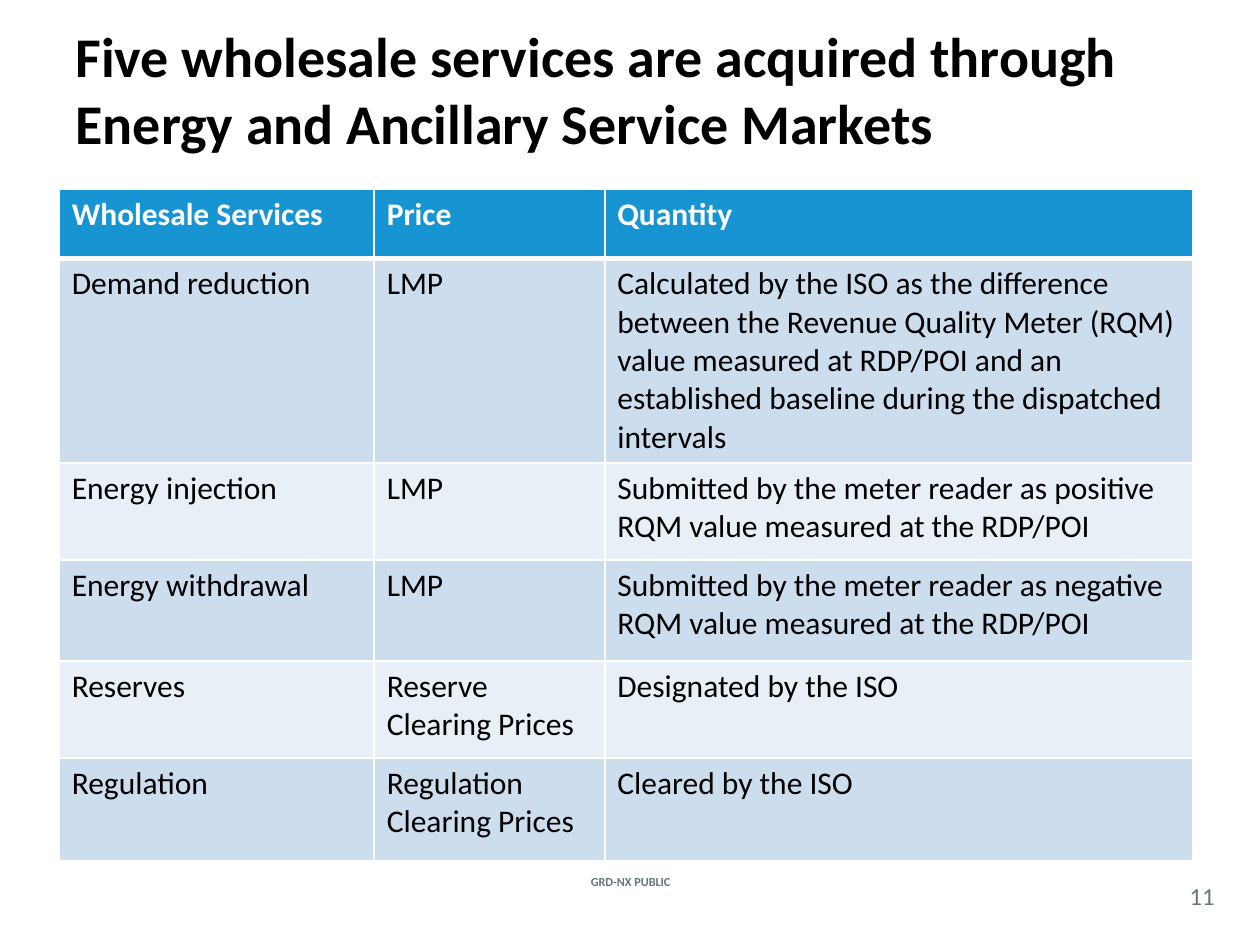
from dataclasses import dataclass

from lxml import etree
from pptx import Presentation
from pptx.dml.color import RGBColor
from pptx.enum.text import MSO_ANCHOR, PP_ALIGN
from pptx.oxml.ns import qn
from pptx.util import Inches, Pt

LEFT, CENTER = PP_ALIGN.LEFT, PP_ALIGN.CENTER
MIDDLE = MSO_ANCHOR.MIDDLE
TITLE_ONLY = 5


@dataclass(frozen=True)
class Theme:
    font: str = "Calibri"
    ink: str = "000000"
    white: str = "FFFFFF"
    muted: str = "62777F"
    header: str = "1795D2"
    bands: tuple = ("CCDDEE", "E8EFF7")
    title_size: int = 32
    table_size: int = 18
    number_size: int = 14
    label_size: int = 7


THEME = Theme()


def write(frame, text, size, color, bold=False, align=LEFT):
    frame.text = text
    frame.word_wrap = True
    para = frame.paragraphs[0]
    para.alignment = align
    for span in para.runs:
        span.font.name = THEME.font
        span.font.size = Pt(size)
        span.font.bold = bold
        span.font.color.rgb = RGBColor.from_string(color)


def add_borders(cell, widths):
    """Draw white cell borders; widths maps L, R, T, B to points, in that order."""
    properties = cell._tc.get_or_add_tcPr()
    for side, points in widths.items():
        line = etree.SubElement(properties, qn(f"a:ln{side}"), w=str(Pt(points)))
        solid = etree.SubElement(line, qn("a:solidFill"))
        etree.SubElement(solid, qn("a:srgbClr"), val=THEME.white)


deck = Presentation()
deck.slide_width, deck.slide_height = Inches(10), Inches(7.5)
page = deck.slides.add_slide(deck.slide_layouts[TITLE_ONLY])

# Title
title = page.shapes.title
title.left, title.top = Inches(0.5), Inches(0.08)
title.width, title.height = Inches(9), Inches(1.25)
title.text_frame.vertical_anchor = MIDDLE
write(title.text_frame,
      "Five wholesale services are acquired through Energy and Ancillary Service Markets",
      THEME.title_size, THEME.ink, bold=True)

# Services table
services = [
    ("Wholesale Services", "Price", "Quantity"),
    ("Demand reduction", "LMP",
     "Calculated by the ISO as the difference between the Revenue Quality Meter (RQM) "
     "value measured at RDP/POI and an established baseline during the dispatched intervals"),
    ("Energy injection", "LMP",
     "Submitted by the meter reader as positive RQM value measured at the RDP/POI"),
    ("Energy withdrawal", "LMP",
     "Submitted by the meter reader as negative RQM value measured at the RDP/POI"),
    ("Reserves", "Reserve Clearing Prices", "Designated by the ISO"),
    ("Regulation", "Regulation Clearing Prices", "Cleared by the ISO"),
]
column_widths = [2.5, 1.83, 4.67]
row_heights = [0.55, 1.62, 0.77, 0.8, 0.77, 0.82]

table = page.shapes.add_table(
    len(services), len(column_widths), Inches(0.47), Inches(1.5),
    Inches(sum(column_widths)), Inches(sum(row_heights))).table
for column, width in zip(table.columns, column_widths):
    column.width = Inches(width)
for row, height in zip(table.rows, row_heights):
    row.height = Inches(height)

for row_index, texts in enumerate(services):
    is_header = row_index == 0
    fill = THEME.header if is_header else THEME.bands[(row_index - 1) % 2]
    color = THEME.white if is_header else THEME.ink
    top = 3 if row_index == 1 else 1
    bottom = 3 if is_header else 1
    for column_index, text in enumerate(texts):
        cell = table.cell(row_index, column_index)
        write(cell.text_frame, text, THEME.table_size, color, bold=is_header)
        add_borders(cell, {"L": 1, "R": 1, "T": top, "B": bottom})
        cell.fill.solid()
        cell.fill.fore_color.rgb = RGBColor.from_string(fill)

# Footer label and page number
label = page.shapes.add_textbox(Inches(4.27), Inches(6.75), Inches(1.47), Inches(0.5))
label.text_frame.vertical_anchor = MIDDLE
write(label.text_frame, "GRD-NX PUBLIC", THEME.label_size, THEME.muted,
      bold=True, align=CENTER)

number = page.shapes.add_textbox(Inches(9.33), Inches(6.96), Inches(0.42), Inches(0.29))
frame = number.text_frame
frame.margin_left = frame.margin_right = frame.margin_top = frame.margin_bottom = 0
frame.vertical_anchor = MIDDLE
write(frame, "11", THEME.number_size, THEME.muted, align=CENTER)

deck.save("out.pptx")
